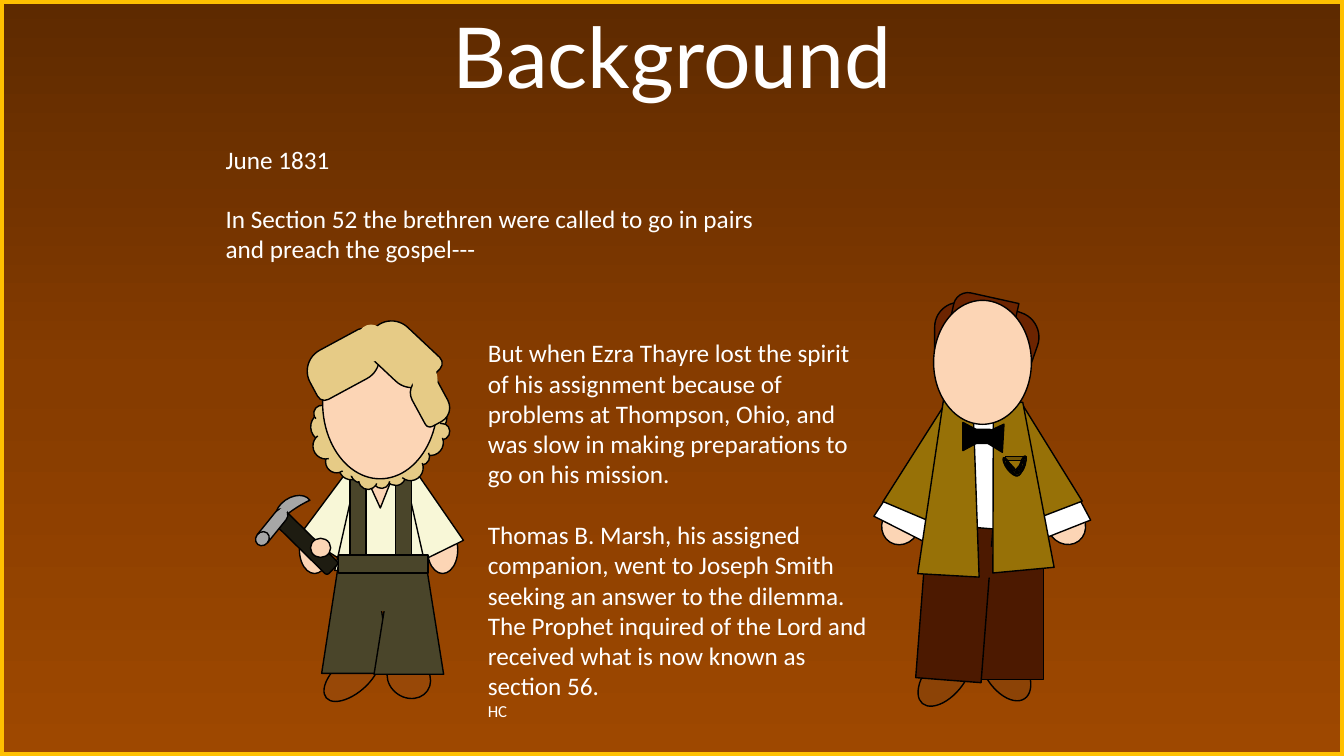
from copy import deepcopy

from pptx import Presentation
from pptx.dml.color import RGBColor
from pptx.enum.shapes import MSO_SHAPE as Kind
from pptx.enum.text import MSO_AUTO_SIZE as AutoSize, PP_ALIGN as Align
from pptx.oxml.ns import qn
from pptx.util import Inches, Pt

COLORS = {
    "white": "FFFFFF", "black": "000000", "gold": "FFC000",
    "top": "5E2A00", "middle": "863C00", "bottom": "9E4800",
    "skin": "FCD5B5", "blond": "E6CB86", "cream": "F8F7D7",
    "olive": "4A452A", "boot": "984807", "handle": "1E1C11", "steel": "A6A6A6",
    "jacket": "977107", "trousers": "4C1900", "shoe": "8C4306",
    "brown": "6C2400", "badge": "6F5305",
}


def rgb(name):
    return RGBColor.from_string(COLORS[name])


class SlideBuilder:
    """Holds the style, the current slide and the group being drawn."""

    font = "Calibri"
    text_color = "white"
    line_width = 1

    def __init__(self, presentation):
        self.slide = presentation.slides.add_slide(presentation.slide_layouts[6])
        self.shapes = self.slide.shapes

    def start_figure(self):
        self.shapes = self.slide.shapes.add_group_shape().shapes

    def piece(self, kind, color, box, rotation=0, adjust=(), flip=False, outlined=True):
        shape = self.shapes.add_shape(kind, *map(Inches, box))
        shape.shadow.inherit = False
        shape.rotation = rotation
        for index, value in enumerate(adjust):
            shape.adjustments[index] = value
        if flip:
            shape._element.spPr.xfrm.set("flipH", "1")
        shape.fill.solid()
        shape.fill.fore_color.rgb = rgb(color)
        if outlined:
            shape.line.color.rgb = rgb("black")
            shape.line.width = Pt(self.line_width)
        else:
            shape.line.fill.background()
        return shape

    def backdrop(self, box, stops, border, width):
        shape = self.piece(Kind.RECTANGLE, border, box)
        shape.line.color.rgb = rgb(border)
        shape.line.width = Pt(width)
        shape.fill.gradient()
        shape.fill.gradient_angle = 270
        stop_list = shape._element.spPr.find(qn("a:gradFill")).find(qn("a:gsLst"))
        stop_list.insert(1, deepcopy(stop_list[0]))
        for stop, (position, color) in zip(shape.fill.gradient_stops, stops):
            stop.position = position
            stop.color.rgb = rgb(color)

    def text(self, box, *paragraphs, font=None, align=Align.LEFT):
        """Each paragraph is (text, size, space before)."""
        frame = self.slide.shapes.add_textbox(*map(Inches, box)).text_frame
        frame.word_wrap = True
        frame.auto_size = AutoSize.SHAPE_TO_FIT_TEXT
        for index, (words, size, gap) in enumerate(paragraphs):
            paragraph = frame.add_paragraph() if index else frame.paragraphs[0]
            paragraph.text = words
            paragraph.alignment = align
            paragraph.space_before = Pt(gap)
            paragraph.font.name = font or self.font
            paragraph.font.size = Pt(size)
            paragraph.font.color.rgb = rgb(self.text_color)


def draw_miner(builder):
    builder.start_figure()
    piece = builder.piece
    # Boots and hands
    piece(Kind.OVAL, "boot", (3.86, 6.5, 0.39, 0.45), 304.5)
    piece(Kind.OVAL, "boot", (3.32, 6.37, 0.34, 0.67), 49.1)
    for left in (4.24, 2.97):
        piece(Kind.OVAL, "skin", (left, 5.22, 0.3, 0.47))
    # Shirt
    piece(Kind.TRAPEZOID, "cream", (3.87, 4.6, 0.55, 0.93), 333.8)
    piece(Kind.TRAPEZOID, "cream", (3.16, 4.66, 0.55, 0.85), 31.8, [0.131])
    piece(Kind.TRAPEZOID, "cream", (3.32, 4.65, 0.91, 1.01))
    piece(Kind.ISOSCELES_TRIANGLE, "skin", (3.59, 4.64, 0.34, 0.4), 180, [0.465])
    # Trousers, braces and waistband
    piece(Kind.TRAPEZOID, "olive", (3.19, 5.56, 0.69, 1.12))
    piece(Kind.TRAPEZOID, "olive", (3.71, 5.56, 0.69, 1.13), adjust=[0.26])
    piece(Kind.ROUNDED_RECTANGLE, "olive", (3.45, 5.59, 0.69, 0.47), outlined=False)
    for left in (3.47, 3.92):
        piece(Kind.RECTANGLE, "olive", (left, 4.67, 0.16, 0.89))
    piece(Kind.RECTANGLE, "olive", (3.71, 5.15, 0.18, 0.89), 90)
    # Beard and face
    piece(Kind.CLOUD, "blond", (3.65, 3.99, 0.81, 0.6), 175.3)
    piece(Kind.CLOUD, "blond", (2.98, 4.07, 0.82, 0.59), 72.4)
    piece(Kind.CLOUD, "blond", (3.45, 4.24, 0.81, 0.6), 175.3)
    for left, top in ((4.1, 4.28), (3.38, 4.5)):
        piece(Kind.OVAL, "blond", (left, top, 0.22, 0.22), outlined=False)
    piece(Kind.OVAL, "skin", (3.2, 3.24, 1.14, 1.51))
    # Hair
    for box, rotation in (((3.03, 3.38, 0.75, 0.47), 151.6),
                          ((3.61, 3.28, 0.75, 0.47), 223.2),
                          ((4.11, 3.73, 0.31, 0.48), 151.6)):
        piece(Kind.ROUND_2_DIAG_RECTANGLE, "blond", box, rotation, [0.167, 0.5], flip=True)
    piece(Kind.OVAL, "blond", (3.53, 3.22, 0.3, 0.37), outlined=False)
    piece(Kind.OVAL, "blond", (4.09, 3.59, 0.25, 0.37), outlined=False)
    # Pickaxe and thumb
    piece(Kind.ROUNDED_RECTANGLE, "handle", (2.95, 5.01, 0.17, 0.75), 314.5)
    piece(Kind.MOON, "steel", (2.8, 4.82, 0.14, 0.4), 55, [0.875])
    piece(Kind.FLOWCHART_MAGNETIC_DISK, "steel", (2.63, 5.01, 0.13, 0.44), 219)
    piece(Kind.OVAL, "steel", (2.75, 5.04, 0.11, 0.07), 314.5, outlined=False)
    piece(Kind.OVAL, "skin", (3.08, 5.34, 0.2, 0.19))


def draw_gentleman(builder):
    builder.start_figure()
    piece = builder.piece
    # Shirt, hands and cuffs
    piece(Kind.TRAPEZOID, "white", (9.48, 4, 0.61, 1.66), adjust=[0.26])
    piece(Kind.OVAL, "skin", (10.39, 5, 0.37, 0.41), 322.3)
    piece(Kind.OVAL, "skin", (8.75, 5, 0.37, 0.41), 32.2)
    piece(Kind.TRAPEZOID, "white", (8.73, 4.86, 0.56, 0.41), 26.9, [0.112], flip=True)
    piece(Kind.TRAPEZOID, "white", (10.24, 4.86, 0.52, 0.41), 338.4, [0.112])
    # Shoes and trousers
    piece(Kind.OVAL, "shoe", (9.77, 6.3, 0.4, 0.69), 326.2)
    piece(Kind.OVAL, "shoe", (9.18, 6.37, 0.38, 0.69), 39.9)
    piece(Kind.TRAPEZOID, "trousers", (9.62, 5.27, 0.73, 1.47), adjust=[0])
    piece(Kind.TRAPEZOID, "trousers", (9.14, 5.22, 0.65, 1.53), 4.4, [0])
    # Sleeves and waist
    piece(Kind.TRAPEZOID, "jacket", (8.96, 3.98, 0.56, 1.15), 22.9, [0.344])
    piece(Kind.TRAPEZOID, "jacket", (9.99, 3.98, 0.56, 1.13), 339, [0.383])
    piece(Kind.OVAL, "trousers", (9.57, 5.14, 0.31, 0.89), 264.6, outlined=False)
    # Hair
    hair = Kind.ROUND_2_DIAG_RECTANGLE
    piece(hair, "brown", (9.78, 3.07, 0.51, 0.54), 109.4, [0.5, 0])
    piece(hair, "brown", (9.27, 3, 0.61, 0.49), adjust=[0.5, 0])
    piece(hair, "brown", (9.45, 2.94, 0.63, 0.31), 192.5, [0, 0.462], flip=True)
    # Jacket
    piece(Kind.TRAPEZOID, "jacket", (9.15, 3.98, 0.61, 1.73), 3.2, [0.26])
    piece(Kind.TRAPEZOID, "jacket", (9.77, 4, 0.61, 1.66), 354.7, [0.26])
    # Bow tie and face
    piece(Kind.ISOSCELES_TRIANGLE, "black", (9.54, 4.2, 0.28, 0.26), 90)
    piece(Kind.ISOSCELES_TRIANGLE, "black", (9.68, 4.21, 0.28, 0.26), 273.3)
    piece(Kind.OVAL, "skin", (9.26, 2.98, 0.97, 1.23))
    piece(Kind.ROUNDED_RECTANGLE, "black", (9.63, 4.26, 0.21, 0.14))
    # Badge: a bar with a curved chain of rings on each side
    piece(Kind.RECTANGLE, "badge", (9.97, 4.53, 0.21, 0.04))
    for left, mirrored_left, top, height, tilt in ((9.97, 10.12, 4.53, 0.17, 330.6),
                                                   (10.01, 10.1, 4.57, 0.17, 321.5),
                                                   (10.02, 10.08, 4.62, 0.11, 314)):
        piece(Kind.DONUT, "badge", (left, top, 0.05, height), tilt)
        piece(Kind.DONUT, "badge", (mirrored_left, top - 0.01, 0.05, height),
              346.8 - tilt, flip=True)
    piece(Kind.DONUT, "badge", (10.06, 4.65, 0.06, 0.07), 270)


def main():
    presentation = Presentation()
    presentation.slide_width = Inches(13.33)
    presentation.slide_height = Inches(7.5)
    builder = SlideBuilder(presentation)

    # Backdrop
    builder.backdrop((0, 0, 13.33, 7.5),
                     ((0, "top"), (0.5, "middle"), (1, "bottom")), "gold", 6)

    # Title and story
    builder.text((2.14, 1.38, 2.02, 0.4), ("June 1831", 18, 0))
    builder.text((1.97, 0, 9.39, 1.11), ("Background", 60, 0),
                 font="Lato", align=Align.CENTER)
    builder.text(
        (4.74, 3.3, 4, 4.04),
        ("But when Ezra Thayre lost the spirit of his assignment because of problems "
         "at Thompson, Ohio, and was slow in making preparations to go on his mission.",
         18, 0),
        ("Thomas B. Marsh, his assigned companion, went to Joseph Smith seeking an "
         "answer to the dilemma. The Prophet inquired of the Lord and received what "
         "is now known as section 56.", 18, 22),
        ("HC", 12, 0))
    builder.text((2.14, 1.97, 5.5, 0.71),
                 ("In Section 52 the brethren were called to go in pairs and preach "
                  "the gospel---", 18, 0))

    # Figures
    draw_miner(builder)
    draw_gentleman(builder)
    presentation.save("out.pptx")


if __name__ == "__main__":
    main()
